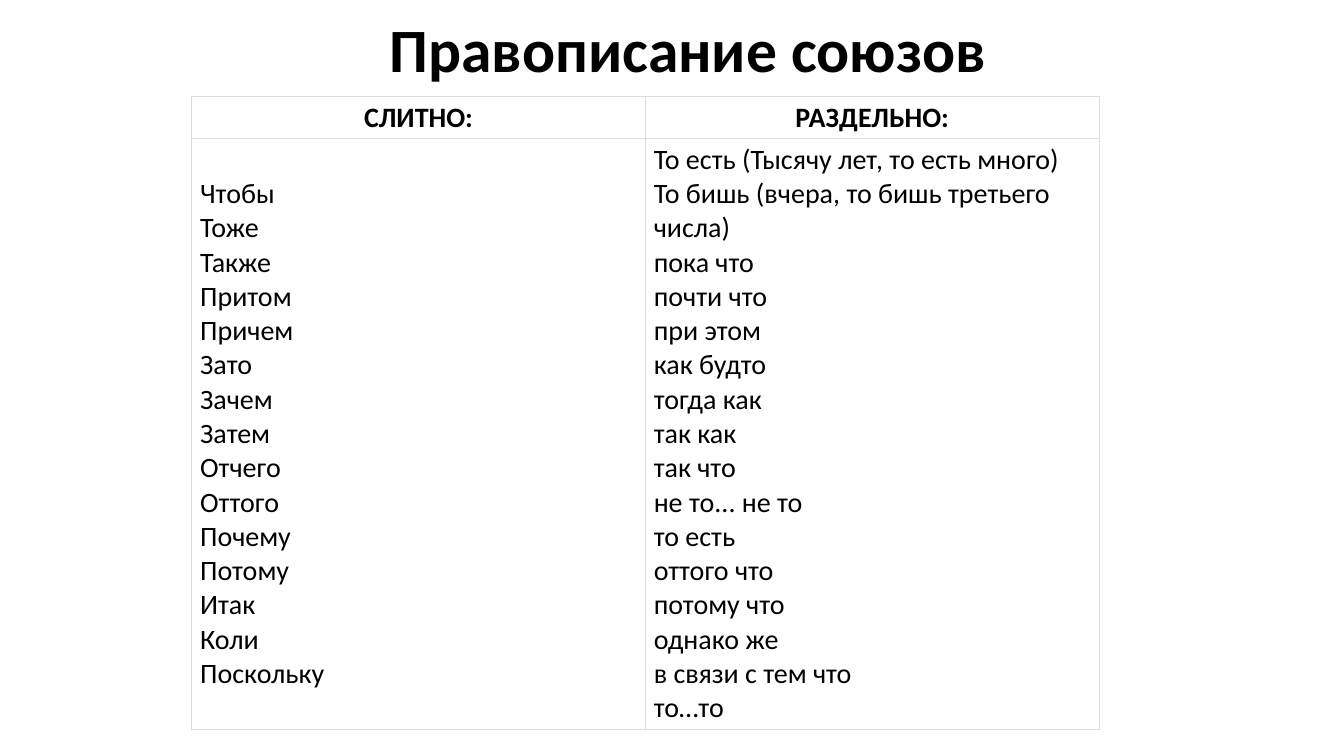
"""Build a slide with a two-column table on the spelling of Russian conjunctions."""
from dataclasses import dataclass

from lxml import etree
from pptx import Presentation
from pptx.dml.color import RGBColor
from pptx.enum.text import MSO_ANCHOR, PP_ALIGN
from pptx.oxml.ns import qn
from pptx.util import Pt

CENTER, LEFT = PP_ALIGN.CENTER, PP_ALIGN.LEFT
MIDDLE = MSO_ANCHOR.MIDDLE
BLACK = RGBColor(0x00, 0x00, 0x00)
WHITE = RGBColor(0xFF, 0xFF, 0xFF)
BORDER = RGBColor(0xDD, 0xDD, 0xDD)
FONT = "Calibri"
COL_WIDTH = Pt(324)
ROW_HEIGHTS = (Pt(30), Pt(422.5))


@dataclass(frozen=True)
class Column:
    heading: str
    words: tuple[str, ...]


COLUMNS = (
    Column("СЛИТНО:", (
        "Чтобы", "Тоже", "Также", "Притом", "Причем", "Зато", "Зачем", "Затем",
        "Отчего", "Оттого", "Почему", "Потому", "Итак", "Коли", "Поскольку",
    )),
    Column("РАЗДЕЛЬНО:", (
        "То есть (Тысячу лет, то есть много)",
        "То бишь (вчера, то бишь третьего числа)",
        "пока что", "почти что", "при этом", "как будто", "тогда как", "так как",
        "так что", "не то... не то", "то есть", "оттого что", "потому что",
        "однако же", "в связи с тем что", "то…то",
    )),
)


def write(p, text: str, size: float, bold: bool, align) -> None:
    p.text = text
    p.alignment = align
    p.font.name = FONT
    p.font.size = Pt(size)
    p.font.bold = bold
    p.font.color.rgb = BLACK


def add_borders(cell) -> None:
    props = cell._tc.get_or_add_tcPr()
    for i, side in enumerate(("lnL", "lnR", "lnT", "lnB")):
        line = etree.Element(qn(f"a:{side}"), w=str(Pt(0.75)))
        fill = etree.SubElement(line, qn("a:solidFill"))
        etree.SubElement(fill, qn("a:srgbClr"), val=str(BORDER))
        props.insert(i, line)


def fill_cell(cell, text: str, bold: bool, align) -> None:
    cell.fill.solid()
    cell.fill.fore_color.rgb = WHITE
    cell.vertical_anchor = MIDDLE
    cell.margin_left = cell.margin_right = Pt(6)
    cell.margin_top = cell.margin_bottom = Pt(3)
    write(cell.text_frame.paragraphs[0], text, 20, bold, align)
    add_borders(cell)


def add_title(s) -> None:
    sp = s.shapes.add_textbox(Pt(77.75), Pt(-14.5), Pt(828), Pt(104.5))
    tf = sp.text_frame
    tf.word_wrap = True
    tf.vertical_anchor = MIDDLE
    p = tf.paragraphs[0]
    write(p, "Правописание союзов", 44, True, CENTER)
    p.line_spacing = 0.9


def add_conjunctions(s) -> None:
    table = s.shapes.add_table(
        len(ROW_HEIGHTS), len(COLUMNS), Pt(137), Pt(68.75),
        COL_WIDTH * len(COLUMNS), sum(ROW_HEIGHTS),
    ).table
    table.first_row = table.horz_banding = False
    for row, height in zip(table.rows, ROW_HEIGHTS):
        row.height = height
    for i, column in enumerate(COLUMNS):
        table.columns[i].width = COL_WIDTH
        fill_cell(table.cell(0, i), column.heading, True, CENTER)
        fill_cell(table.cell(1, i), "\n".join(column.words), False, LEFT)


def main() -> None:
    prs = Presentation()
    prs.slide_width, prs.slide_height = Pt(960), Pt(540)
    s = prs.slides.add_slide(prs.slide_layouts[6])
    add_title(s)
    add_conjunctions(s)
    prs.save("out.pptx")


if __name__ == "__main__":
    main()
